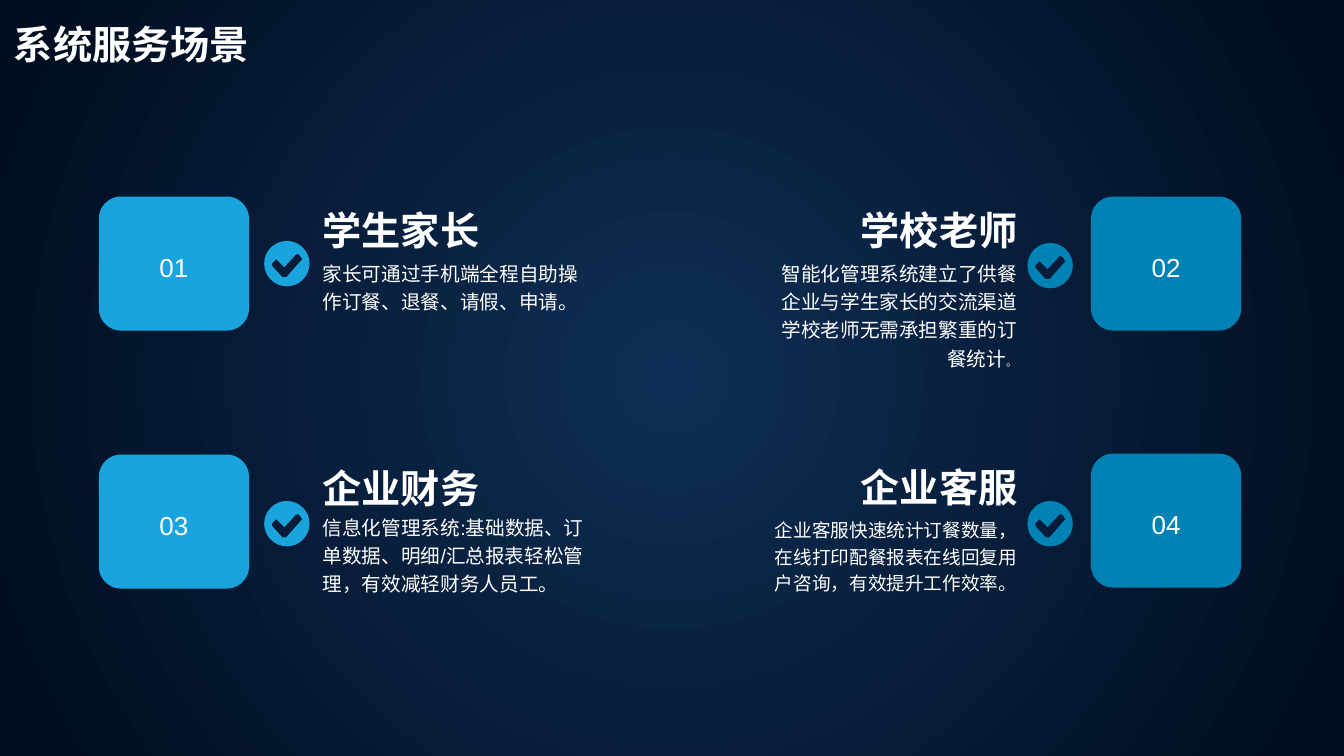
from collections import namedtuple

import pptx
import pptx.dml.color
import pptx.enum.shapes
import pptx.enum.text
import pptx.oxml
import pptx.oxml.ns
import pptx.util

Inches = pptx.util.Inches
Pt = pptx.util.Pt
Align = pptx.enum.text.PP_ALIGN
Shape = pptx.enum.shapes.MSO_SHAPE
Box = namedtuple("Box", "left top width height")
Scene = namedtuple("Scene", "number heading body size tail joined tick_top")
Side = namedtuple("Side", "color alignment tick_offset mirrored")

COLORS = {
    "glow": "0F2E55",
    "night": "000E21",
    "left": "1AA4DE",
    "right": "0082B4",
    "text": "FFFFFF",
}
FONT = "Arial"
CARD_WIDTH, CARD_HEIGHT = 1.49, 1.33
TICK_SIZE = 0.45
TEXT_OFFSET = 2.22
CURVE = 0.55
TICK_MARK = [
    (0.37, 0.17), (0.35, 0.14), (0.33, 0.13), (0.31, 0.14), (0.2, 0.26),
    (0.13, 0.19), (0.12, 0.18), (0.11, 0.19), (0.08, 0.22), (0.08, 0.25),
    (0.18, 0.36), (0.2, 0.36), (0.22, 0.36), (0.37, 0.19), (0.38, 0.18),
]
SIDES = [
    Side("left", Align.LEFT, 1.64, False),
    Side("right", Align.RIGHT, 1.67, True),
]

SCENES = [
    (Box(0.98, 1.95, 4.83, 1.18), Scene(
        "01", "学生家长", "家长可通过手机端全程自助操作订餐、退餐、请假、申请。",
        14, "", False, 0.44)),
    (Box(7.64, 1.95, 4.67, 1.93), Scene(
        "02", "学校老师",
        "智能化管理系统建立了供餐企业与学生家长的交流渠道学校老师无需承担繁重的订餐统计",
        14, "。", False, 0.46)),
    (Box(0.98, 4.51, 4.83, 1.41), Scene(
        "03", "企业财务",
        "信息化管理系统:基础数据、订单数据、明细/汇总报表轻松管理，有效减轻财务人员工。",
        14, "", True, 0.46)),
    (Box(7.64, 4.5, 4.67, 1.42), Scene(
        "04", "企业客服",
        "企业客服快速统计订餐数量，在线打印配餐报表在线回复用户咨询，有效提升工作效率。",
        13.3, "", False, 0.47)),
]


def rgb(name):
    return pptx.dml.color.RGBColor.from_string(COLORS[name])


def place(box):
    return [Inches(value) for value in box]


def paint(shape, color):
    shape.shadow.inherit = False
    shape.fill.solid()
    shape.fill.fore_color.rgb = rgb(color)
    shape.line.fill.background()


def style(span, size, bold=False):
    span.font.name = FONT
    span.font.size = Pt(size)
    span.font.bold = bold
    span.font.color.rgb = rgb("text")


def clear_margins(frame):
    frame.margin_left = frame.margin_right = 0
    frame.margin_top = frame.margin_bottom = 0


def set_backdrop(page):
    page.background.fill.solid()
    gradient = pptx.oxml.parse_xml(
        f'<a:gradFill {pptx.oxml.ns.nsdecls("a")} rotWithShape="1"><a:gsLst>'
        f'<a:gs pos="0"><a:srgbClr val="{COLORS["glow"]}"/></a:gs>'
        f'<a:gs pos="94000"><a:srgbClr val="{COLORS["night"]}"/></a:gs></a:gsLst>'
        '<a:path path="circle">'
        '<a:fillToRect l="50000" t="50000" r="50000" b="50000"/>'
        '</a:path></a:gradFill>')
    solid = next(page.element.iter(pptx.oxml.ns.qn("a:solidFill")))
    solid.getparent().replace(solid, gradient)


def add_title(page, box):
    frame = page.shapes.add_textbox(*place(box)).text_frame
    frame.word_wrap = True
    frame.text = "系统服务场景"
    para = frame.paragraphs[0]
    para.alignment = Align.JUSTIFY
    style(para.runs[0], 28, True)


def add_card(page, box, number, color):
    card = page.shapes.add_shape(Shape.ROUNDED_RECTANGLE, *place(box))
    paint(card, color)
    frame = card.text_frame
    clear_margins(frame)
    frame.vertical_anchor = pptx.enum.text.MSO_ANCHOR.MIDDLE
    frame.text = number
    para = frame.paragraphs[0]
    para.alignment = Align.CENTER
    para.line_spacing = 1.2
    style(para.runs[0], 18.6)


def curve_between(start, end, center):
    (x1, y1), (x2, y2) = start, end
    controls = [
        (x1 + CURVE * (x2 - center), y1 + CURVE * (y2 - center)),
        (x2 + CURVE * (x1 - center), y2 + CURVE * (y1 - center)),
        end,
    ]
    points = "".join(f'<a:pt x="{Inches(x)}" y="{Inches(y)}"/>' for x, y in controls)
    return pptx.oxml.parse_xml(
        f'<a:cubicBezTo {pptx.oxml.ns.nsdecls("a")}>{points}</a:cubicBezTo>')


def add_tick(page, box, color):
    radius, size = box.width / 2, box.width
    disc = [(radius, size), (0, radius), (radius, 0), (size, radius), (radius, size)]
    rings = [[(Inches(box.left + x), Inches(box.top + y)) for x, y in ring]
             for ring in (disc, TICK_MARK)]
    builder = page.shapes.build_freeform(*rings[0][0])
    builder.add_line_segments(rings[0][1:], close=True)
    builder.move_to(*rings[1][0])
    builder.add_line_segments(rings[1][1:], close=True)
    tick = builder.convert_to_shape()
    edges = list(tick.element.iter(pptx.oxml.ns.qn("a:lnTo")))
    for edge, start, end in zip(edges, disc, disc[1:]):
        edge.getparent().replace(edge, curve_between(start, end, radius))
    paint(tick, color)


def add_description(page, box, scene, alignment):
    frame = page.shapes.add_textbox(*place(box)).text_frame
    frame.word_wrap = True
    clear_margins(frame)
    if scene.joined:
        frame.paragraphs[0].text = scene.heading + "\v" + scene.body
    else:
        frame.text = scene.heading + "\n" + scene.body
        frame.paragraphs[1].space_before = Pt(3)
    for para in frame.paragraphs:
        para.alignment = alignment
        para.line_spacing = 1.2
    heading, body = [span for para in frame.paragraphs for span in para.runs]
    style(heading, 28, True)
    style(body, scene.size)
    if scene.tail:
        tail = frame.paragraphs[-1].add_run()
        tail.text = scene.tail
        style(tail, 8)


def add_scene(page, box, scene, side):
    def across(offset, width):
        return box.left + (box.width - offset - width if side.mirrored else offset)

    text_width = box.width - TEXT_OFFSET
    add_description(
        page, Box(across(TEXT_OFFSET, text_width), box.top, text_width, box.height),
        scene, side.alignment)
    add_tick(
        page, Box(across(side.tick_offset, TICK_SIZE), box.top + scene.tick_top,
                  TICK_SIZE, TICK_SIZE), side.color)
    add_card(
        page, Box(across(0, CARD_WIDTH), box.top, CARD_WIDTH, CARD_HEIGHT),
        scene.number, side.color)


def main():
    deck = pptx.Presentation()
    deck.slide_width = Inches(13.33)
    deck.slide_height = Inches(7.5)
    page = deck.slides.add_slide(deck.slide_layouts[6])
    set_backdrop(page)
    for index, (box, scene) in enumerate(SCENES):
        add_scene(page, box, scene, SIDES[index % 2])
    add_title(page, Box(0.04, 0.15, 3.27, 0.57))
    deck.save("out.pptx")


if __name__ == "__main__":
    main()
